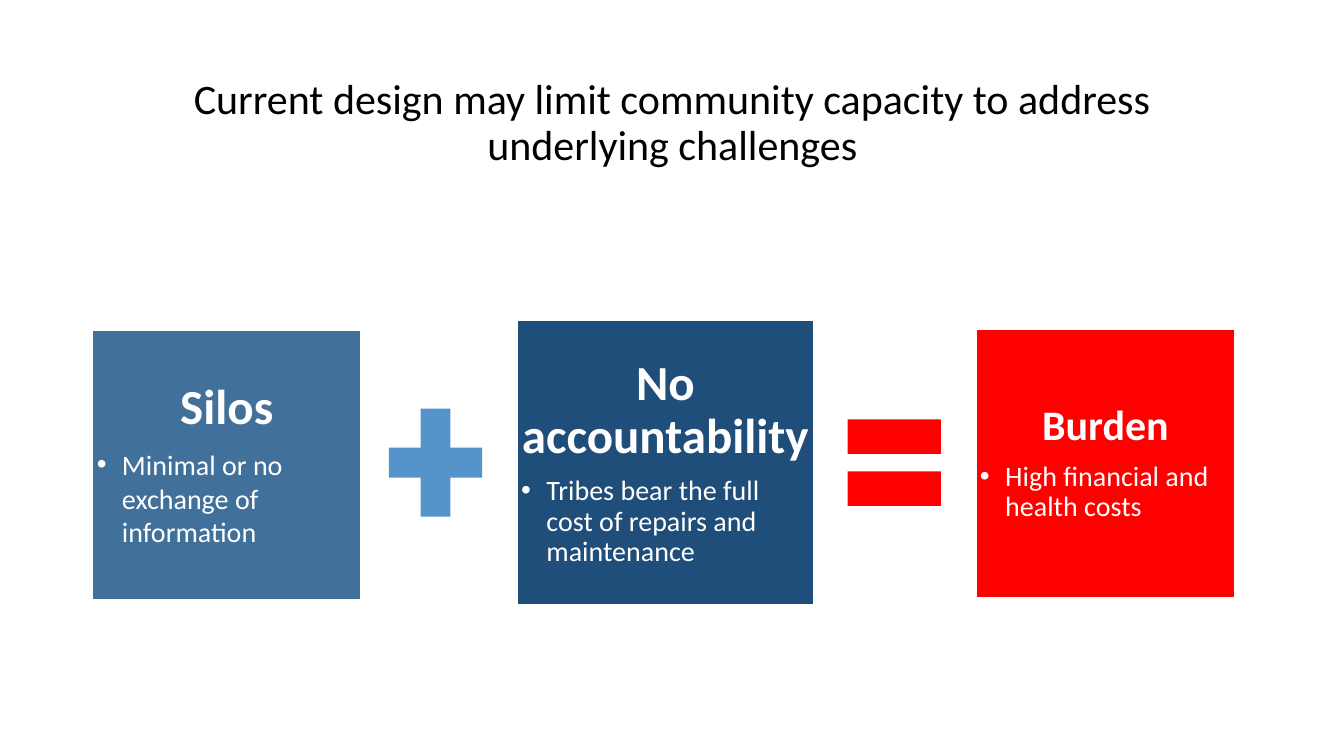
from dataclasses import dataclass

import pptx
import pptx.dml.color
import pptx.enum.shapes
import pptx.enum.text
import pptx.oxml.ns
import pptx.util
from lxml import etree
from pptx.util import Inches

SHAPE = pptx.enum.shapes.MSO_SHAPE
ALIGN = pptx.enum.text.PP_ALIGN
COLORS = {
    "black": "000000",
    "white": "FFFFFF",
    "steel": "41709B",
    "navy": "1E4E79",
    "sky": "5593CB",
    "red": "FF0000",
}
BULLET_INDENT = Inches(0.25)


@dataclass
class Card:
    box: tuple[float, float, float, float]
    color: str
    heading: str
    heading_size: int
    detail: str
    detail_spacing: float = 0.9


@dataclass
class Operator:
    left: float
    kind: SHAPE
    color: str
    adjustments: tuple[float, ...]


CARDS = [
    Card((0.92, 3.28, 2.66, 2.67), "steel", "Silos", 35,
         "Minimal or no exchange of information", 1.0),
    Card((5.13, 3.18, 2.94, 2.82), "navy", "No accountability", 35,
         "Tribes bear the full cost of repairs and maintenance"),
    Card((9.68, 3.27, 2.57, 2.66), "red", "Burden", 30,
         "High financial and health costs"),
]
OPERATORS = [
    Operator(3.69, SHAPE.MATH_PLUS, "sky", (0.235,)),
    Operator(8.24, SHAPE.MATH_EQUAL, "red", (0.235, 0.118)),
]


def rgb(name: str) -> pptx.dml.color.RGBColor:
    return pptx.dml.color.RGBColor.from_string(COLORS[name])


def add_bullet(p) -> None:
    """Give the paragraph a hanging bullet."""
    ppr = p._p.get_or_add_pPr()
    ppr.set("marL", str(BULLET_INDENT))
    ppr.set("indent", str(-BULLET_INDENT))
    font = etree.SubElement(ppr, pptx.oxml.ns.qn("a:buFont"))
    font.set("typeface", "Arial")
    etree.SubElement(ppr, pptx.oxml.ns.qn("a:buChar")).set("char", "•")


def write(p, text: str, *, size: int, color: str = "white", bold: bool = False,
          align: ALIGN = ALIGN.CENTER, spacing: float = 0.9,
          before: float = 0, bullet: bool = False) -> None:
    p.alignment = align
    p.line_spacing = spacing
    p.space_before = pptx.util.Pt(before)
    if bullet:
        add_bullet(p)
    r = p.add_run()
    r.text = text
    r.font.name = "Calibri"
    r.font.size = pptx.util.Pt(size)
    r.font.bold = bold
    r.font.color.rgb = rgb(color)


def set_frame(tf, inset_x: float, inset_y: float) -> None:
    tf.word_wrap = True
    tf.vertical_anchor = pptx.enum.text.MSO_ANCHOR.MIDDLE
    tf.margin_left = tf.margin_right = Inches(inset_x)
    tf.margin_top = tf.margin_bottom = Inches(inset_y)


def add_filled(s, kind: SHAPE, box: tuple[float, float, float, float], color: str):
    sp = s.shapes.add_shape(kind, *map(Inches, box))
    sp.shadow.inherit = False
    sp.fill.solid()
    sp.fill.fore_color.rgb = rgb(color)
    sp.line.fill.background()
    return sp


def add_title(s, text: str) -> None:
    sp = s.shapes.add_textbox(*map(Inches, (0.92, 0.61, 11.5, 1.24)))
    set_frame(sp.text_frame, 0.1, 0.05)
    write(sp.text_frame.paragraphs[0], text, size=30, color="black")


def add_card(s, card: Card) -> None:
    sp = add_filled(s, SHAPE.RECTANGLE, card.box, card.color)
    sp.line.color.rgb = rgb("white")
    sp.line.width = pptx.util.Pt(1)
    tf = sp.text_frame
    set_frame(tf, 0.04, 0.04)
    write(tf.paragraphs[0], card.heading, size=card.heading_size, bold=True)
    write(tf.add_paragraph(), card.detail, size=20, align=ALIGN.LEFT,
          spacing=card.detail_spacing, before=9.1, bullet=True)


def add_operator(s, op: Operator) -> None:
    sp = add_filled(s, op.kind, (op.left, 3.86, 1.26, 1.46), op.color)
    for i, value in enumerate(op.adjustments):
        sp.adjustments[i] = value


def main() -> None:
    prs = pptx.Presentation()
    prs.slide_width, prs.slide_height = Inches(13.33), Inches(7.5)
    s = prs.slides.add_slide(prs.slide_layouts[6])
    add_title(s, "Current design may limit community capacity to address "
                 "underlying challenges")
    for card in CARDS:
        add_card(s, card)
    for op in OPERATORS:
        add_operator(s, op)
    prs.save("out.pptx")


if __name__ == "__main__":
    main()
